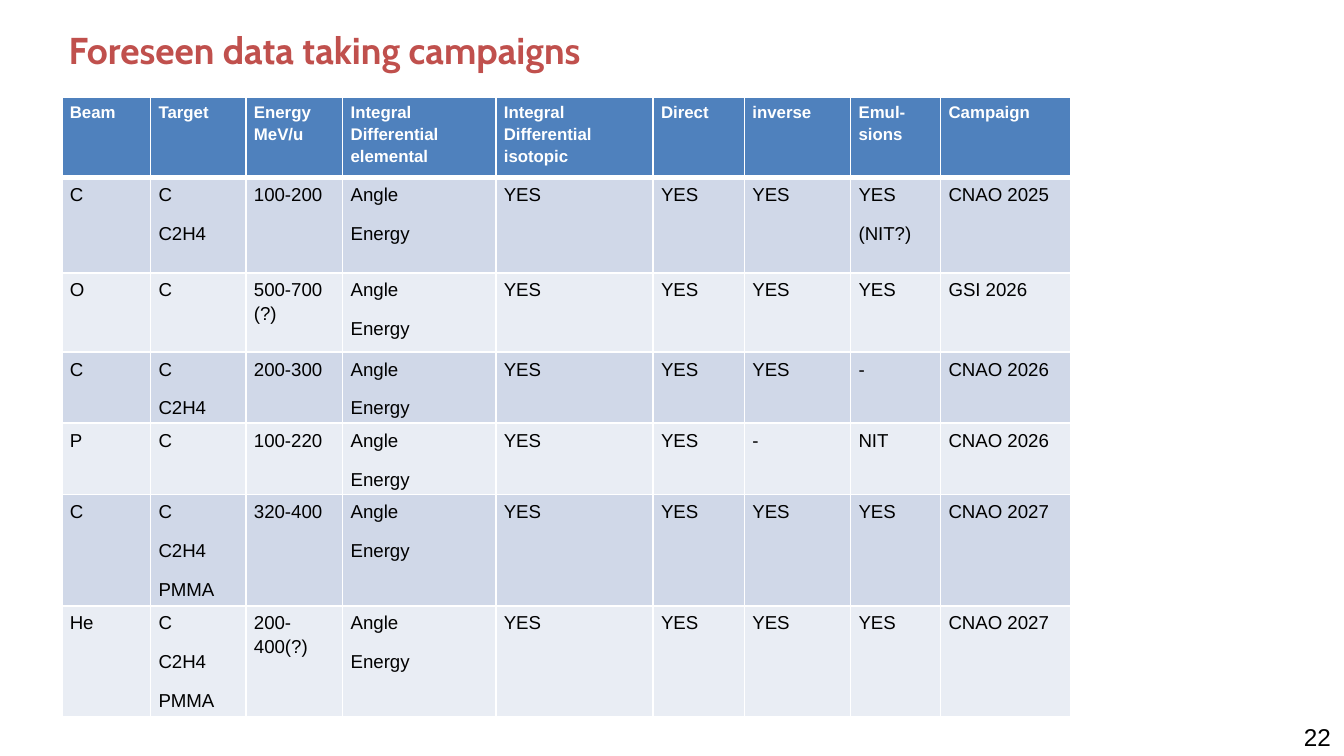
import pptx
import pptx.dml.color
import pptx.enum.text
import pptx.oxml.ns
import pptx.util
from lxml import etree

Inches = pptx.util.Inches
Pt = pptx.util.Pt
RGBColor = pptx.dml.color.RGBColor
PP_ALIGN = pptx.enum.text.PP_ALIGN
MSO_ANCHOR = pptx.enum.text.MSO_ANCHOR
qn = pptx.oxml.ns.qn

RED = RGBColor(0xC0, 0x50, 0x4D)
BLUE = RGBColor(0x4F, 0x81, 0xBD)
BAND_DARK = RGBColor(0xD0, 0xD8, 0xE8)
BAND_LIGHT = RGBColor(0xE9, 0xED, 0xF4)
WHITE = RGBColor(0xFF, 0xFF, 0xFF)
BLACK = RGBColor(0x00, 0x00, 0x00)

COLUMN_WIDTHS = [0.66, 0.71, 0.72, 1.14, 1.17, 0.68, 0.79, 0.67, 0.97]
ROW_HEIGHTS = [0.6, 0.71, 0.59, 0.53, 0.53, 0.82, 0.82]

HEADINGS = ["Beam", "Target", "Energy MeV/u", "Integral Differential elemental",
            "Integral Differential isotopic", "Direct", "inverse", "Emul-sions", "Campaign"]
# Beam, target, energy, direct, inverse, emulsions, campaign; a newline starts a paragraph
CAMPAIGNS = [
    ("C", "C\nC2H4", "100-200", "YES", "YES", "YES\n(NIT?)", "CNAO 2025"),
    ("O", "C", "500-700 (?)", "YES", "YES", "YES", "GSI 2026"),
    ("C", "C\nC2H4", "200-300", "YES", "YES", "-", "CNAO 2026"),
    ("P", "C", "100-220", "YES", "-", "NIT", "CNAO 2026"),
    ("C", "C\nC2H4\nPMMA", "320-400", "YES", "YES", "YES", "CNAO 2027"),
    ("He", "C\nC2H4\nPMMA", "200-400(?)", "YES", "YES", "YES", "CNAO 2027"),
]
# Every campaign measures the same elemental and isotopic cross sections
CROSS_SECTIONS = ("Angle\nEnergy", "YES")


class CampaignSlide:
    title_font = "Cabin"
    body_font = "Arial"

    def __init__(self, presentation):
        self.slide = presentation.slides.add_slide(presentation.slide_layouts[5])

    def format_text(self, frame, font, size, color, bold=False, align=PP_ALIGN.LEFT,
                    line_spacing=1.0, space_after=0):
        for paragraph in frame.paragraphs:
            paragraph.alignment = align
            paragraph.line_spacing = line_spacing
            paragraph.space_before = Pt(0)
            paragraph.space_after = Pt(space_after)
            for run in paragraph.runs:
                run.font.name = font
                run.font.size = Pt(size)
                run.font.bold = bold
                run.font.color.rgb = color

    def title(self, text, left, top, width, height):
        heading = self.slide.shapes.title
        heading.left, heading.top = Inches(left), Inches(top)
        heading.width, heading.height = Inches(width), Inches(height)
        frame = heading.text_frame
        frame.text = text
        frame.auto_size = pptx.enum.text.MSO_AUTO_SIZE.NONE
        frame.vertical_anchor = MSO_ANCHOR.MIDDLE
        frame.margin_left = Inches(0.06)
        frame.margin_right = frame.margin_top = frame.margin_bottom = 0
        self.format_text(frame, self.title_font, 20, RED, bold=True, line_spacing=0.9)

    def page_number(self, text, left, top, width, height):
        number = self.slide.shapes.add_textbox(
            Inches(left), Inches(top), Inches(width), Inches(height))
        frame = number.text_frame
        frame.word_wrap = True
        frame.vertical_anchor = MSO_ANCHOR.MIDDLE
        frame.text = text
        self.format_text(frame, self.body_font, 13, BLACK, align=PP_ALIGN.RIGHT)

    def borders(self, cell, top, bottom):
        properties = cell._tc.get_or_add_tcPr()
        sides = {"a:lnL": 1, "a:lnR": 1, "a:lnT": top, "a:lnB": bottom}
        for position, (side, width) in enumerate(sides.items()):
            line = etree.Element(qn(side), w=str(Pt(width)))
            fill = etree.SubElement(line, qn("a:solidFill"))
            etree.SubElement(fill, qn("a:srgbClr"), val=str(WHITE))
            properties.insert(position, line)

    def cell(self, cell, text, row):
        header = row == 0
        cell.text_frame.text = text
        cell.margin_left = cell.margin_right = Inches(0.06)
        cell.margin_top = Inches(0.03)
        cell.margin_bottom = 0  # lets the tallest cells fit their row
        self.format_text(cell.text_frame, self.body_font, 9 if header else 10,
                         WHITE if header else BLACK, bold=header,
                         line_spacing=1.15, space_after=8)
        cell.fill.solid()
        band = BAND_DARK if row % 2 else BAND_LIGHT
        cell.fill.fore_color.rgb = BLUE if header else band
        # A thick rule parts the header from the body
        self.borders(cell, top=3 if row == 1 else 1, bottom=3 if header else 1)

    def table(self, rows, left, top):
        grid = self.slide.shapes.add_table(
            len(rows), len(COLUMN_WIDTHS), Inches(left), Inches(top),
            Inches(sum(COLUMN_WIDTHS)), Inches(sum(ROW_HEIGHTS))).table
        for column, width in zip(grid.columns, COLUMN_WIDTHS):
            column.width = Inches(width)
        for index, (values, height) in enumerate(zip(rows, ROW_HEIGHTS)):
            grid.rows[index].height = Inches(height)
            for column, text in enumerate(values):
                self.cell(grid.cell(index, column), text, index)


def main():
    presentation = pptx.Presentation()
    # Widescreen, 16:9
    presentation.slide_width = Inches(10)
    presentation.slide_height = Inches(10) * 9 // 16
    campaigns = CampaignSlide(presentation)

    # Title and page number
    campaigns.title("Foreseen data taking campaigns", 0.45, 0.06, 9.55, 0.66)
    campaigns.page_number("22", 7.75, 5.33, 2.25, 0.3)

    # Campaign table
    body = [entry[:3] + CROSS_SECTIONS + entry[3:] for entry in CAMPAIGNS]
    campaigns.table([HEADINGS] + body, 0.46, 0.72)

    presentation.save("out.pptx")


if __name__ == "__main__":
    main()
